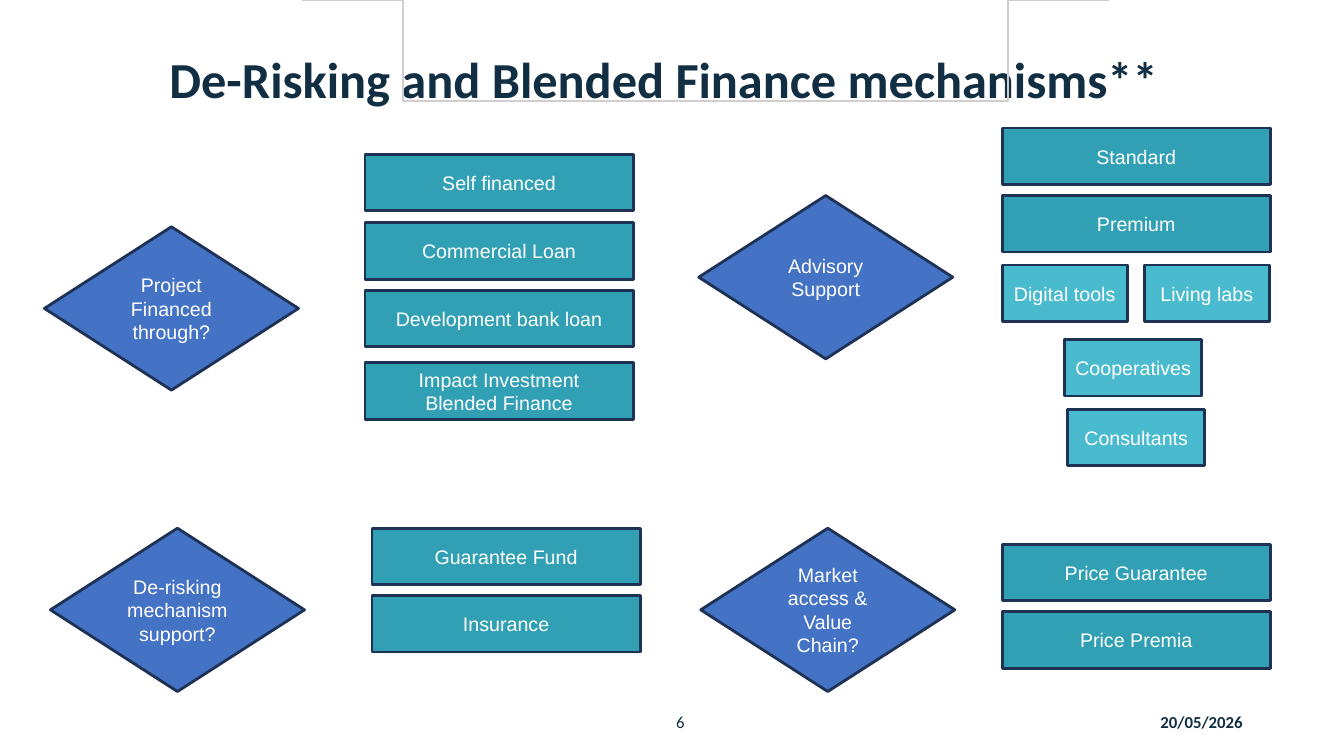
from pptx import Presentation
from pptx.dml.color import RGBColor
from pptx.enum import shapes, text
from pptx.util import Inches, Pt

NAVY = RGBColor(0x11, 0x2E, 0x43)
OUTLINE = RGBColor(0x1E, 0x32, 0x56)
BLUE = RGBColor(0x44, 0x72, 0xC4)
TEAL = RGBColor(0x31, 0xA0, 0xB4)
AQUA = RGBColor(0x4A, 0xBB, 0xCE)
GREY = RGBColor(0xD0, 0xCE, 0xCE)
WHITE = RGBColor(0xFF, 0xFF, 0xFF)

DIAMOND_WIDTH, DIAMOND_HEIGHT = 2.52, 1.62
WIDE, HALF, MEDIUM = 2.66, 1.24, 1.36
BOX_HEIGHT = 0.56


def style_text(shape, size, color, font, bold=False, align=text.PP_ALIGN.LEFT):
    shape.text_frame.vertical_anchor = text.MSO_ANCHOR.MIDDLE
    for para in shape.text_frame.paragraphs:
        para.alignment = align
        para.font.size = Pt(size)
        para.font.name = font
        para.font.bold = bold
        para.font.color.rgb = color


def add_node(group, kind, left, top, width, height, label, fill):
    node = group.shapes.add_shape(
        kind, Inches(left), Inches(top), Inches(width), Inches(height))
    node.shadow.inherit = False
    node.fill.solid()
    node.fill.fore_color.rgb = fill
    node.line.color.rgb = OUTLINE
    node.line.width = Pt(2)
    node.text_frame.text = label
    node.text_frame.word_wrap = True
    style_text(node, 14, WHITE, "Arial", align=text.PP_ALIGN.CENTER)
    return node


deck = Presentation()
deck.slide_width, deck.slide_height = Inches(13.33), Inches(7.5)
page = deck.slides.add_slide(deck.slide_layouts[5])

bezier_segments = [
    [(3.38, 0.2), (4.42, 0.78), (5.41, 1.29), (7.13, 1.09)],
    [(7.13, 1.09), (8.52, 0.93), (9.79, 0.6), (10.78, 0.12)],
]
steps = 30
curve_points = [bezier_segments[0][0]]
for segment in bezier_segments:
    for step in range(1, steps + 1):
        t = step / steps
        weights = [(1 - t) ** 3, 3 * t * (1 - t) ** 2, 3 * t ** 2 * (1 - t), t ** 3]
        curve_points.append(tuple(
            sum(weight * point[axis] for weight, point in zip(weights, segment))
            for axis in (0, 1)))
curve_points.append((11.02, 0))
builder = page.shapes.build_freeform(3.02, 0, scale=Inches(1))
builder.add_line_segments(curve_points, close=False)
curve = builder.convert_to_shape()
curve.shadow.inherit = False
curve.fill.background()
curve.line.color.rgb = GREY
curve.line.width = Pt(1.25)

title = page.shapes.title
title.left, title.top = Inches(1.58), Inches(0.43)
title.width, title.height = Inches(10.2), Inches(0.77)
title.text_frame.text = "De-Risking and Blended Finance mechanisms**"
title.text_frame.auto_size = text.MSO_AUTO_SIZE.NONE
title.text_frame.paragraphs[0].line_spacing = 0.9
style_text(title, 36, NAVY, "Calibri", bold=True)

sections = [
    ("Project Financed through?", 0.44, 2.25, [
        ("Self financed", 3.62, 1.53, WIDE, TEAL),
        ("Commercial Loan", 3.62, 2.21, WIDE, TEAL),
        ("Development bank loan", 3.62, 2.88, WIDE, TEAL),
        ("Impact Investment\nBlended Finance", 3.62, 3.6, WIDE, TEAL),
    ]),
    ("De-risking mechanism support?", 0.5, 5.24, [
        ("Guarantee Fund", 3.69, 5.24, WIDE, TEAL),
        ("Insurance", 3.69, 5.91, WIDE, TEAL),
    ]),
    ("Advisory Support", 6.93, 1.94, [
        ("Standard", 9.94, 1.27, WIDE, TEAL),
        ("Premium", 9.94, 1.94, WIDE, TEAL),
        ("Digital tools", 9.94, 2.63, HALF, AQUA),
        ("Living labs", 11.35, 2.63, HALF, AQUA),
        ("Cooperatives", 10.56, 3.37, MEDIUM, AQUA),
        ("Consultants", 10.59, 4.06, MEDIUM, AQUA),
    ]),
    ("Market access & Value Chain?", 6.95, 5.24, [
        ("Price Guarantee", 9.94, 5.4, WIDE, TEAL),
        ("Price Premia", 9.94, 6.07, WIDE, TEAL),
    ]),
]
for question, left, top, options in sections:
    group = page.shapes.add_group_shape()
    add_node(group, shapes.MSO_SHAPE.FLOWCHART_DECISION, left, top,
             DIAMOND_WIDTH, DIAMOND_HEIGHT, question, BLUE)
    for label, box_left, box_top, width, fill in options:
        box = add_node(group, shapes.MSO_SHAPE.RECTANGLE, box_left, box_top,
                       width, BOX_HEIGHT, label, fill)
        box.text_frame.margin_left = box.text_frame.margin_right = Inches(0.05)

footers = [
    ("6", 6.45, 0.44, False, text.PP_ALIGN.RIGHT),
    ("20/05/2026", 11.41, 1.6, True, text.PP_ALIGN.LEFT),
]
for label, left, width, bold, align in footers:
    footer = page.shapes.add_textbox(
        Inches(left), Inches(6.96), Inches(width), Inches(0.4))
    footer.text_frame.text = label
    footer.text_frame.word_wrap = True
    style_text(footer, 12, NAVY, "Calibri", bold, align)

deck.save("out.pptx")
